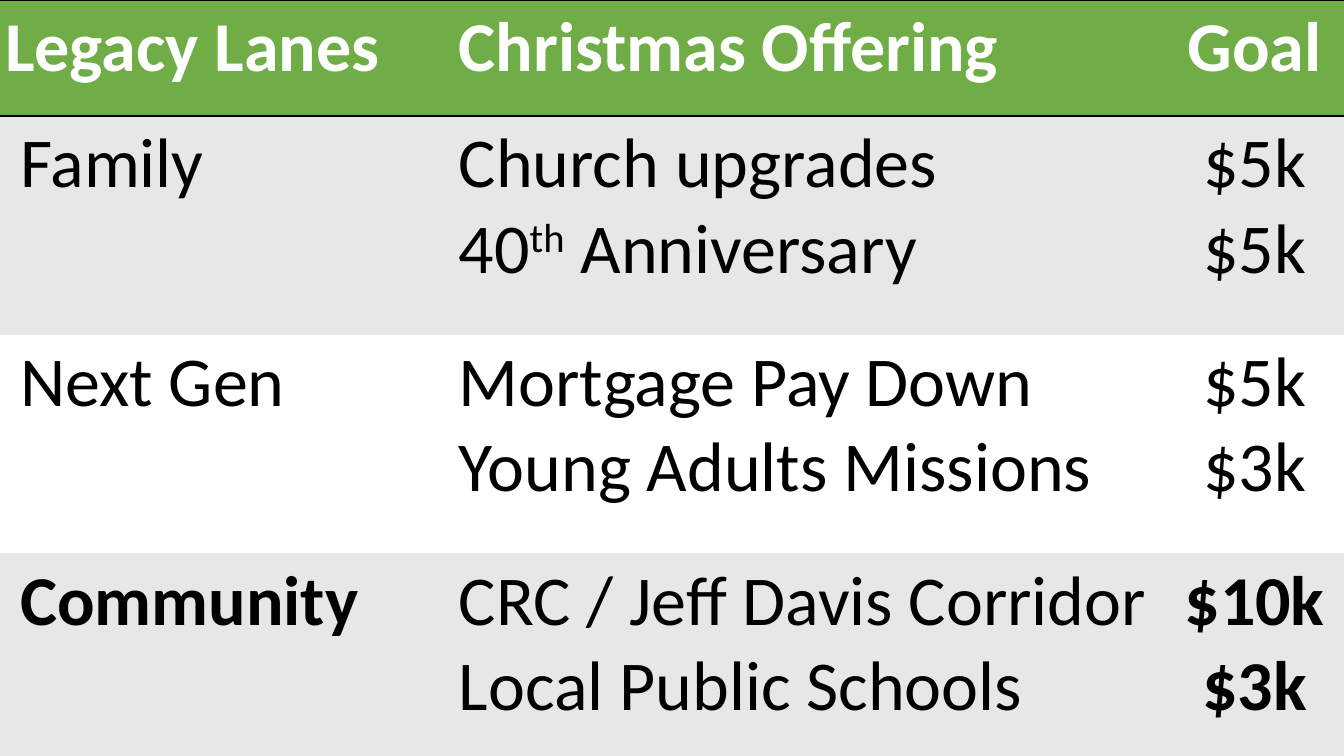
from dataclasses import dataclass

from lxml import etree
from pptx import Presentation
from pptx.dml.color import RGBColor
from pptx.enum import text
from pptx.oxml import ns
from pptx.util import Inches, Pt

HUES = {"green": "70AD47", "grey": "E7E7E7", "white": "FFFFFF", "black": "000000"}
FONT = "Calibri"
PLAIN = "{2D5ABB26-0587-4C30-8999-92F81FD0307C}"
WIDTHS = (4.18, 7.37, 1.79)
HEAD, BODY = 1.15, 2.17
PAD = 0.05
LEFT, MID = text.PP_ALIGN.LEFT, text.PP_ALIGN.CENTER


@dataclass
class Entry:
    lines: tuple[str, ...]
    inset: float = PAD
    bold: bool = False
    align: text.PP_ALIGN = LEFT


@dataclass
class Row:
    cells: tuple[Entry, Entry, Entry]
    fill: str
    ink: str = "black"
    edges: tuple[str, ...] = ()


def lane(name: str, gifts: tuple[str, ...], goals: tuple[str, ...],
         fill: str, bold: bool = False, edges: tuple[str, ...] = ()) -> Row:
    cells = (Entry((name,), 0.2, bold), Entry(gifts, 0.37),
             Entry(goals, bold=bold, align=MID))
    return Row(cells, fill, edges=edges)


ROWS = (
    Row((Entry(("Legacy Lanes",), bold=True),
         Entry(("Christmas Offering",), 0.37, True),
         Entry(("Goal",), bold=True, align=MID)),
        "green", "white", ("lnT", "lnB")),
    lane("Family", ("Church upgrades", "40^th^ Anniversary"), ("$5k", "$5k"), "grey"),
    lane("Next Gen", ("Mortgage Pay Down", "Young Adults Missions"),
         ("$5k", "$3k"), "white"),
    lane("Community", ("CRC / Jeff Davis Corridor", "Local Public Schools"),
         ("$10k", "$3k"), "grey", True, ("lnB",)),
)


def rgb(name: str) -> RGBColor:
    return RGBColor.from_string(HUES[name])


def rule(cell, edges: tuple[str, ...]) -> None:
    """Draw black lines on the given edges, in schema order."""
    props = cell._tc.get_or_add_tcPr()
    for spot, edge in enumerate(edges):
        line = etree.Element(ns.qn(f"a:{edge}"), w=str(Pt(2)))
        fill = etree.SubElement(line, ns.qn("a:solidFill"))
        etree.SubElement(fill, ns.qn("a:srgbClr"), val=HUES["black"])
        props.insert(spot, line)


def write(para, line: str) -> None:
    """Add runs; the parts between carets are superscript."""
    for spot, part in enumerate(line.split("^")):
        run = para.add_run()
        run.text = part
        if spot % 2:
            run._r.get_or_add_rPr().set("baseline", "30000")


def fill_cell(cell, entry: Entry, row: Row) -> None:
    cell.fill.solid()
    cell.fill.fore_color.rgb = rgb(row.fill)
    cell.margin_left = Inches(entry.inset)
    cell.margin_right = cell.margin_top = cell.margin_bottom = Inches(PAD)
    frame = cell.text_frame
    for spot, line in enumerate(entry.lines):
        para = frame.add_paragraph() if spot else frame.paragraphs[0]
        para.alignment = entry.align
        font = para.font
        font.name, font.size, font.bold = FONT, Pt(50), entry.bold
        font.color.rgb = rgb(row.ink)
        write(para, line)
    rule(cell, row.edges)


def main() -> None:
    deck = Presentation()
    deck.slide_width, deck.slide_height = Inches(13.33), Inches(7.5)
    slide = deck.slides.add_slide(deck.slide_layouts[6])
    high = HEAD + BODY * (len(ROWS) - 1)
    table = slide.shapes.add_table(len(ROWS), len(WIDTHS), 0, 0,
                                   Inches(sum(WIDTHS)), Inches(high)).table
    table.first_row = table.horz_banding = False
    table._tbl.tblPr.find(ns.qn("a:tableStyleId")).text = PLAIN
    for col, width in zip(table.columns, WIDTHS):
        col.width = Inches(width)
    for spot, row in enumerate(ROWS):
        table.rows[spot].height = Inches(BODY if spot else HEAD)
        for cell, entry in zip(table.rows[spot].cells, row.cells):
            fill_cell(cell, entry, row)
    deck.save("out.pptx")


if __name__ == "__main__":
    main()
